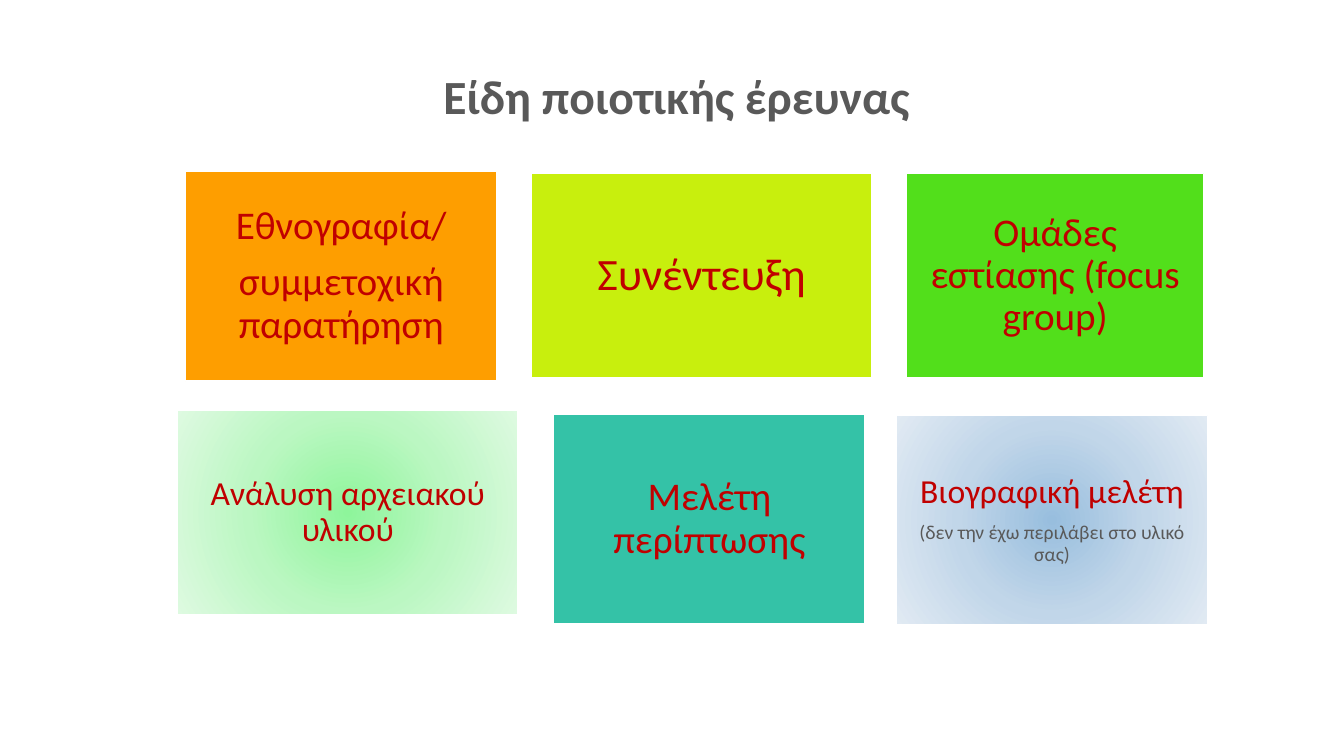
"""Build a slide that shows six kinds of qualitative research as coloured cards."""
from dataclasses import dataclass

from lxml.etree import SubElement
from pptx import Presentation
from pptx.dml.color import RGBColor
from pptx.enum.shapes import MSO_SHAPE
from pptx.enum.text import MSO_ANCHOR, PP_ALIGN
from pptx.oxml.ns import qn
from pptx.util import Inches, Pt

FONT = "Calibri"
SLIDE_WIDTH, SLIDE_HEIGHT = Inches(13.33), Inches(7.5)
WHITE = RGBColor(0xFF, 0xFF, 0xFF)
RED = RGBColor(0xC0, 0x00, 0x00)
GREY = RGBColor(0x59, 0x59, 0x59)
ORANGE = RGBColor(0xFE, 0x9E, 0x00)
LIME = RGBColor(0xC8, 0xEF, 0x0D)
GREEN = RGBColor(0x52, 0xDF, 0x1B)
TEAL = RGBColor(0x34, 0xC2, 0xA7)
MINT_GLOW = (RGBColor(0x8E, 0xF5, 0x9B), RGBColor(0xBB, 0xF7, 0xC2), RGBColor(0xDE, 0xFA, 0xE1))
BLUE_GLOW = (RGBColor(0x98, 0xBE, 0xDE), RGBColor(0xC1, 0xD6, 0xE9), RGBColor(0xE1, 0xEA, 0xF3))

WIDE, MEDIUM, NARROW = (25.36, 27.07), (23.18, 27.73), (22.13, 27.07)


@dataclass
class Card:
    """A card: position and size in percent of the slide, fill and text lines."""
    position: tuple
    size: tuple
    fill: object
    lines: tuple
    font_size: int
    note: str = ""


CARDS = (
    Card((13.8, 22.67), MEDIUM, ORANGE, ("Εθνογραφία/", "συμμετοχική παρατήρηση"), 28),
    Card((39.53, 22.93), WIDE, LIME, ("Συνέντευξη",), 32),
    Card((67.44, 22.93), NARROW, GREEN, ("Ομάδες εστίασης (focus group)",), 28),
    Card((13.2, 54.27), WIDE, MINT_GLOW, ("Ανάλυση αρχειακού υλικού",), 24),
    Card((41.19, 54.8), MEDIUM, TEAL, ("Μελέτη περίπτωσης",), 28),
    Card((66.69, 54.93), MEDIUM, BLUE_GLOW, ("Βιογραφική μελέτη",), 24,
         "(δεν την έχω περιλάβει στο υλικό σας)"),
)


def across(percent):
    """Return a share of the slide width."""
    return round(SLIDE_WIDTH * percent / 100)


def down(percent):
    """Return a share of the slide height."""
    return round(SLIDE_HEIGHT * percent / 100)


def format_paragraph(paragraph, size, color, bold=False):
    """Centre a paragraph and set its spacing and font."""
    paragraph.alignment = PP_ALIGN.CENTER
    paragraph.line_spacing = 0.9
    font = paragraph.font
    font.name, font.size, font.bold = FONT, Pt(size), bold
    font.color.rgb = color


def fill_radial(shape, colors):
    """Fill a shape with a circular gradient from its centre outwards."""
    shape.fill.gradient()
    gradient = shape._element.spPr.find(qn("a:gradFill"))
    for child in list(gradient):
        gradient.remove(child)
    stops = SubElement(gradient, qn("a:gsLst"))
    for index, color in enumerate(colors):
        stop = SubElement(stops, qn("a:gs"), pos=str(index * 50000))
        SubElement(stop, qn("a:srgbClr"), val=str(color))
    circle = SubElement(gradient, qn("a:path"), path="circle")
    SubElement(circle, qn("a:fillToRect"), {side: "50000" for side in "ltrb"})


def add_title(slide, text):
    """Place and format the slide title."""
    title = slide.shapes.title
    title.left, title.top = across(5.7), down(4.4)
    title.width, title.height = across(89.27), down(12.8)
    frame = title.text_frame
    frame.text = text
    frame.vertical_anchor = MSO_ANCHOR.BOTTOM
    format_paragraph(frame.paragraphs[0], 34, GREY, bold=True)


def add_card(slide, card):
    """Add a coloured rectangle with centred text."""
    (left, top), (width, height) = card.position, card.size
    shape = slide.shapes.add_shape(
        MSO_SHAPE.RECTANGLE, across(left), down(top), across(width), down(height))
    shape.shadow.inherit = False
    shape.line.color.rgb = WHITE
    shape.line.width = Pt(1)
    if isinstance(card.fill, RGBColor):
        shape.fill.solid()
        shape.fill.fore_color.rgb = card.fill
    else:
        fill_radial(shape, card.fill)

    frame = shape.text_frame
    frame.word_wrap = True
    frame.vertical_anchor = MSO_ANCHOR.MIDDLE
    inset = Pt(card.font_size * 0.3)
    frame.margin_left = frame.margin_right = frame.margin_top = frame.margin_bottom = inset
    frame.text = "\n".join(card.lines)
    for paragraph in frame.paragraphs:
        format_paragraph(paragraph, card.font_size, RED)
        paragraph.space_after = Pt(card.font_size * 0.35)
    if card.note:
        note = frame.add_paragraph()
        note.text = card.note
        format_paragraph(note, 14, GREY)
        note.space_after = Pt(14 * 0.35)


def main():
    """Create the presentation and save it."""
    presentation = Presentation()
    presentation.slide_width, presentation.slide_height = SLIDE_WIDTH, SLIDE_HEIGHT
    slide = presentation.slides.add_slide(presentation.slide_layouts.get_by_name("Title Only"))
    add_title(slide, "Είδη ποιοτικής έρευνας")
    for card in CARDS:
        add_card(slide, card)
    presentation.save("out.pptx")


if __name__ == "__main__":
    main()
